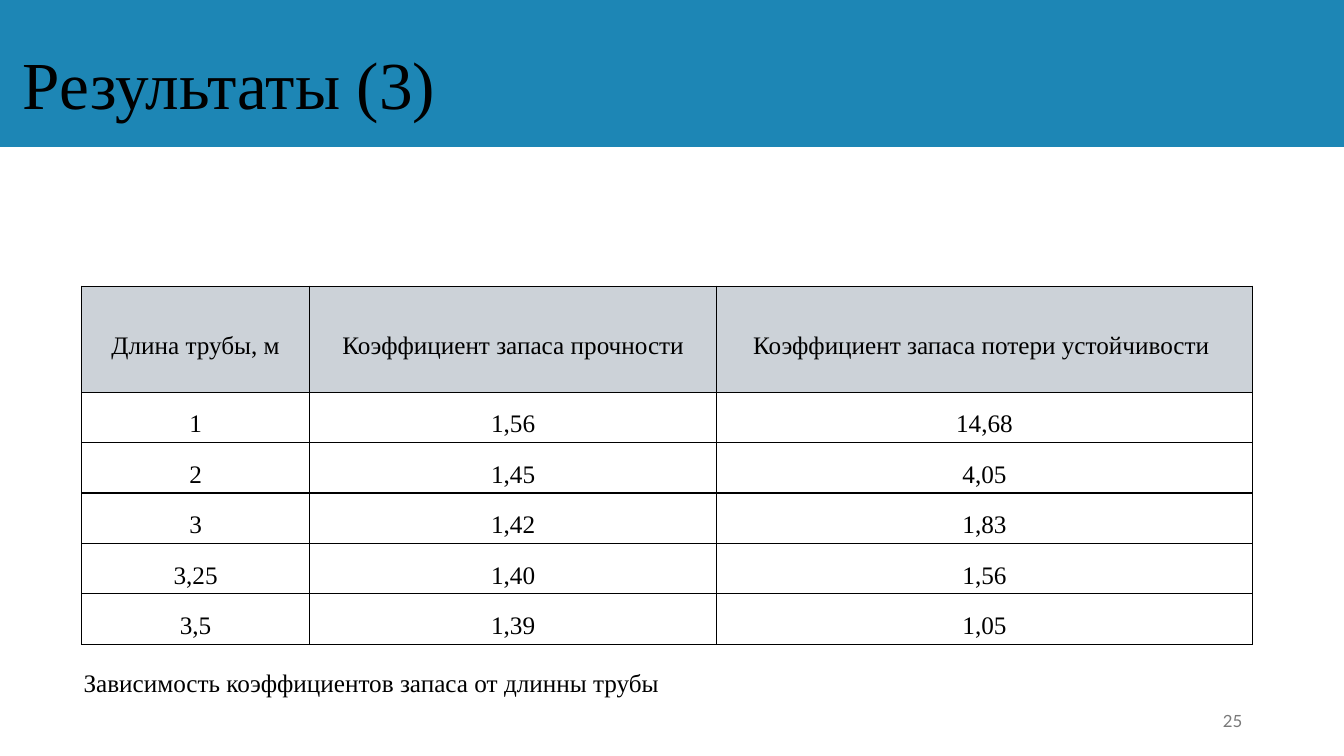
from lxml import etree
from pptx import Presentation
from pptx.dml.color import RGBColor
from pptx.enum.shapes import MSO_SHAPE as Shape
from pptx.enum.text import MSO_ANCHOR as Anchor, PP_ALIGN as Align
from pptx.oxml.ns import qn
from pptx.util import Inches, Pt

# Content
TITLE = "Результаты (3)"
CAPTION = "Зависимость коэффициентов запаса от длинны трубы"
PAGE_NUMBER = "25"
ROWS = [
    ("Длина трубы, м", "Коэффициент запаса прочности",
     "Коэффициент запаса потери устойчивости "),
    ("1", "1,56", "14,68"),
    ("2", "1,45", "4,05"),
    ("3", "1,42", "1,83"),
    ("3,25", "1,40", "1,56"),
    ("3,5", "1,39", "1,05"),
]

# Style
SERIF, SANS = "Times New Roman", "Lato"
BLUE, BLACK, GREY, HEADER_FILL = "1D86B5", "000000", "797979", "CCD2D8"
SLIDE_WIDTH, SLIDE_HEIGHT = 13.33, 7.5
COLUMN_WIDTHS = (2.26, 4.04, 5.31)
HEADER_HEIGHT, ROW_HEIGHT = 1.05, 0.5


def color(value):
    return RGBColor.from_string(value)


def write(frame, text, size, font=SERIF, ink=BLACK, align=Align.LEFT, spacing=1.0):
    paragraph = frame.paragraphs[0]
    paragraph.alignment = align
    paragraph.line_spacing = spacing
    run = paragraph.add_run()
    run.text = text
    run.font.size = Pt(size)
    run.font.name = font
    run.font.color.rgb = color(ink)


def add_text(slide, box, text, size, anchor=Anchor.MIDDLE, **style):
    frame = slide.shapes.add_textbox(*map(Inches, box)).text_frame
    frame.word_wrap = True
    frame.vertical_anchor = anchor
    write(frame, text, size, **style)


def add_borders(cell, ink, width):
    properties = cell._tc.get_or_add_tcPr()
    for side in ("a:lnL", "a:lnR", "a:lnT", "a:lnB"):
        line = etree.SubElement(properties, qn(side), w=str(Pt(width)))
        fill = etree.SubElement(line, qn("a:solidFill"))
        etree.SubElement(fill, qn("a:srgbClr"), val=ink)


def add_results_table(slide, left, top):
    heights = [HEADER_HEIGHT] + [ROW_HEIGHT] * (len(ROWS) - 1)
    table = slide.shapes.add_table(
        len(ROWS), len(COLUMN_WIDTHS), Inches(left), Inches(top),
        Inches(sum(COLUMN_WIDTHS)), Inches(sum(heights))).table
    table.horz_banding = False
    for column, width in zip(table.columns, COLUMN_WIDTHS):
        column.width = Inches(width)
    for row, height in zip(table.rows, heights):
        row.height = Inches(height)
    for row_index, values in enumerate(ROWS):
        for column_index, value in enumerate(values):
            cell = table.cell(row_index, column_index)
            cell.vertical_anchor = Anchor.MIDDLE
            cell.margin_left = cell.margin_right = Inches(0.07)
            cell.margin_top = cell.margin_bottom = 0
            add_borders(cell, BLACK, 1)
            if row_index == 0:
                cell.fill.solid()
                cell.fill.fore_color.rgb = color(HEADER_FILL)
            else:
                cell.fill.background()
            write(cell.text_frame, value, 18, align=Align.CENTER, spacing=1.5)


def main():
    presentation = Presentation()
    presentation.slide_width = Inches(SLIDE_WIDTH)
    presentation.slide_height = Inches(SLIDE_HEIGHT)
    slide = presentation.slides.add_slide(presentation.slide_layouts[6])

    # Title band
    band = slide.shapes.add_shape(
        Shape.RECTANGLE, 0, 0, presentation.slide_width, Inches(1.45))
    band.shadow.inherit = False
    band.fill.solid()
    band.fill.fore_color.rgb = color(BLUE)
    band.line.color.rgb = color(BLUE)
    band.line.width = Pt(1.5)
    add_text(slide, (0.13, 0.15, 11.5, 1.45), TITLE, 48, spacing=0.9)

    # Table with its caption
    add_results_table(slide, 0.81, 2.84)
    add_text(slide, (0.73, 6.57, 8.91, 0.4), CAPTION, 18, anchor=Anchor.TOP)

    # Page number
    add_text(slide, (9.42, 6.95, 3, 0.4), PAGE_NUMBER, 12,
             font=SANS, ink=GREY, align=Align.RIGHT)

    presentation.save("out.pptx")


if __name__ == "__main__":
    main()
